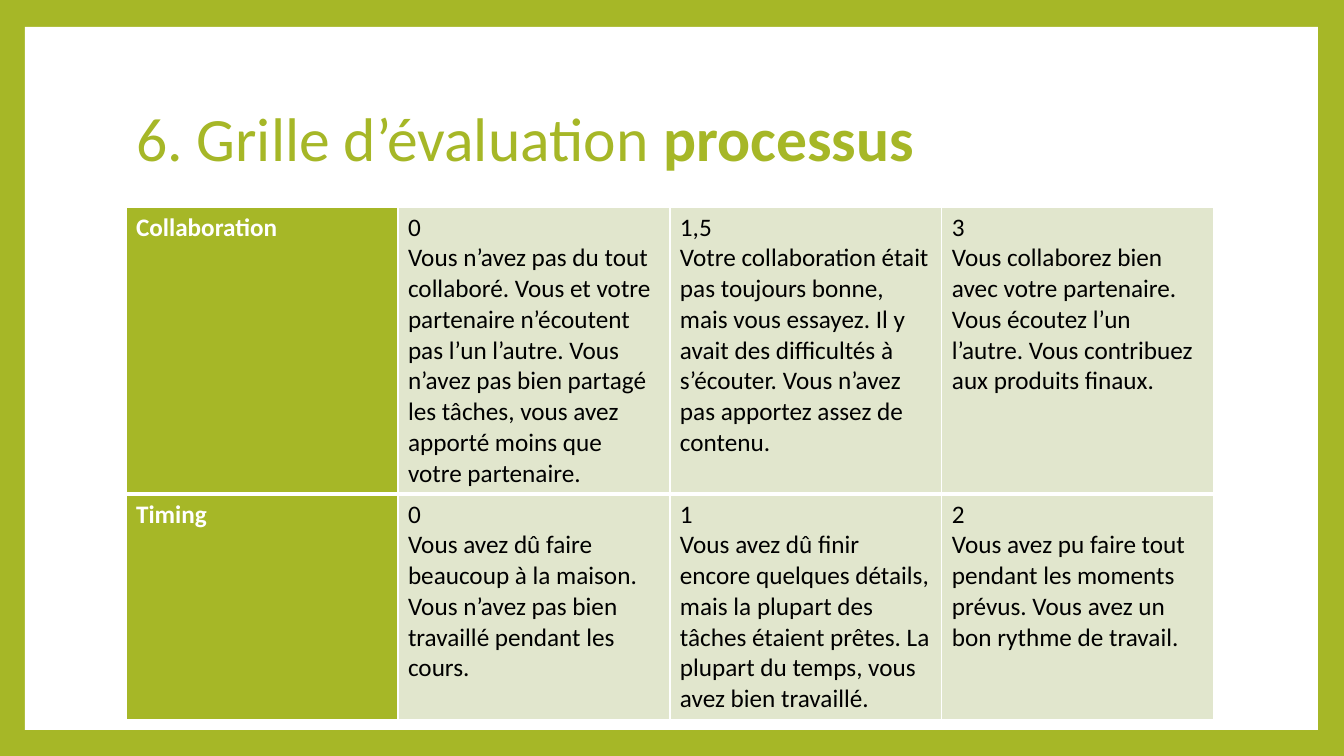
from lxml.etree import SubElement
from pptx import Presentation
from pptx.dml.color import RGBColor
from pptx.enum.shapes import MSO_SHAPE
from pptx.enum.text import MSO_ANCHOR, PP_ALIGN
from pptx.oxml.ns import qn
from pptx.util import Pt

FONT = "Calibri"
GREEN, PALE, WHITE, BLACK = "A6B727", "E1E6CD", "FFFFFF", "000000"

HEADING = [("6. Grille d’évaluation ", False), ("processus", True)]
CRITERIA = [
    ("Collaboration", [
        ("0", "Vous n’avez pas du tout collaboré. Vous et votre partenaire "
              "n’écoutent pas l’un l’autre. Vous n’avez pas bien partagé les "
              "tâches, vous avez apporté moins que votre partenaire."),
        ("1,5", "Votre collaboration était pas toujours bonne, mais vous "
                "essayez. Il y avait des difficultés à s’écouter. Vous n’avez "
                "pas apportez assez de contenu."),
        ("3", "Vous collaborez bien avec votre partenaire. Vous écoutez l’un "
              "l’autre. Vous contribuez aux produits finaux."),
    ]),
    ("Timing", [
        ("0", "Vous avez dû faire beaucoup à la maison. Vous n’avez pas bien "
              "travaillé pendant les cours."),
        ("1", "Vous avez dû finir encore quelques détails, mais la plupart "
              "des tâches étaient prêtes. La plupart du temps, vous avez bien "
              "travaillé."),
        ("2", "Vous avez pu faire tout pendant les moments prévus. Vous avez "
              "un bon rythme de travail."),
    ]),
]

# Pixels: left, top, width, height
SLIDE_SIZE = (1344, 756)
PANEL_BOX = (25, 27, 1293, 703)
HEADING_BOX = (126, 67, 1089, 149)
GRID_LEFT, GRID_TOP, COLUMN_WIDTH = 126, 207, 272
ROW_HEIGHTS = (287, 225)
THIN, THICK = 1, 3  # border widths in points


def px(pixels):
    """Turn pixels into EMU."""
    return round(pixels * 914400 / 100.8)


def colour(hex_code):
    """Turn a hex string into a colour."""
    return RGBColor.from_string(hex_code)


def paint(fill, hex_code):
    """Make a fill solid in one colour."""
    fill.solid()
    fill.fore_color.rgb = colour(hex_code)


def style_font(font, size, hex_code, bold):
    """Set the typeface, size, colour and weight."""
    font.name, font.size, font.bold = FONT, Pt(size), bold
    font.color.rgb = colour(hex_code)


def add_borders(cell, top, bottom):
    """Draw white cell borders with the given top and bottom widths."""
    properties = cell._tc.get_or_add_tcPr()
    widths = {"lnL": THIN, "lnR": THIN, "lnT": top, "lnB": bottom}
    for side, width in widths.items():
        line = SubElement(properties, qn(f"a:{side}"), w=str(Pt(width)))
        solid = SubElement(line, qn("a:solidFill"))
        SubElement(solid, qn("a:srgbClr"), val=WHITE)


def fill_cell(cell, lines, background, text_colour, bold):
    """Write lines of text in a cell and paint it."""
    paint(cell.fill, background)
    cell.text = "\n".join(lines)
    for paragraph in cell.text_frame.paragraphs:
        style_font(paragraph.font, 18, text_colour, bold)


def add_heading(slide):
    """Place the heading in the title placeholder."""
    heading = slide.shapes.title
    heading.left, heading.top, heading.width, heading.height = map(px, HEADING_BOX)
    frame = heading.text_frame
    frame.vertical_anchor = MSO_ANCHOR.MIDDLE
    paragraph = frame.paragraphs[0]
    paragraph.alignment = PP_ALIGN.LEFT
    paragraph.line_spacing = 0.9
    for text, bold in HEADING:
        run = paragraph.add_run()
        run.text = text
        style_font(run.font, 44, GREEN, bold)


def add_panel(slide):
    """Place the white panel behind the heading."""
    panel = slide.shapes.add_shape(MSO_SHAPE.RECTANGLE, *map(px, PANEL_BOX))
    panel.shadow.inherit = False
    paint(panel.fill, WHITE)
    panel.line.fill.background()
    slide.shapes.title.element.addprevious(panel.element)


def add_grid(slide):
    """Build the evaluation table, one criterion a row."""
    columns = 1 + len(CRITERIA[0][1])
    grid = slide.shapes.add_table(
        len(CRITERIA), columns, px(GRID_LEFT), px(GRID_TOP),
        px(columns * COLUMN_WIDTH), px(sum(ROW_HEIGHTS))).table
    grid.first_row = grid.horz_banding = False
    grid.first_col = True
    for column in grid.columns:
        column.width = px(COLUMN_WIDTH)
    for r, (criterion, levels) in enumerate(CRITERIA):
        grid.rows[r].height = px(ROW_HEIGHTS[r])
        top, bottom = (THIN, THICK) if r == 0 else (THICK, THIN)
        for c in range(columns):
            add_borders(grid.cell(r, c), top, bottom)
        fill_cell(grid.cell(r, 0), [criterion], GREEN, WHITE, True)
        for c, level in enumerate(levels, start=1):
            fill_cell(grid.cell(r, c), level, PALE, BLACK, False)


deck = Presentation()
deck.slide_width, deck.slide_height = map(px, SLIDE_SIZE)
slide = deck.slides.add_slide(deck.slide_layouts[5])
paint(slide.background.fill, GREEN)
add_heading(slide)
add_panel(slide)
add_grid(slide)
deck.save("out.pptx")
